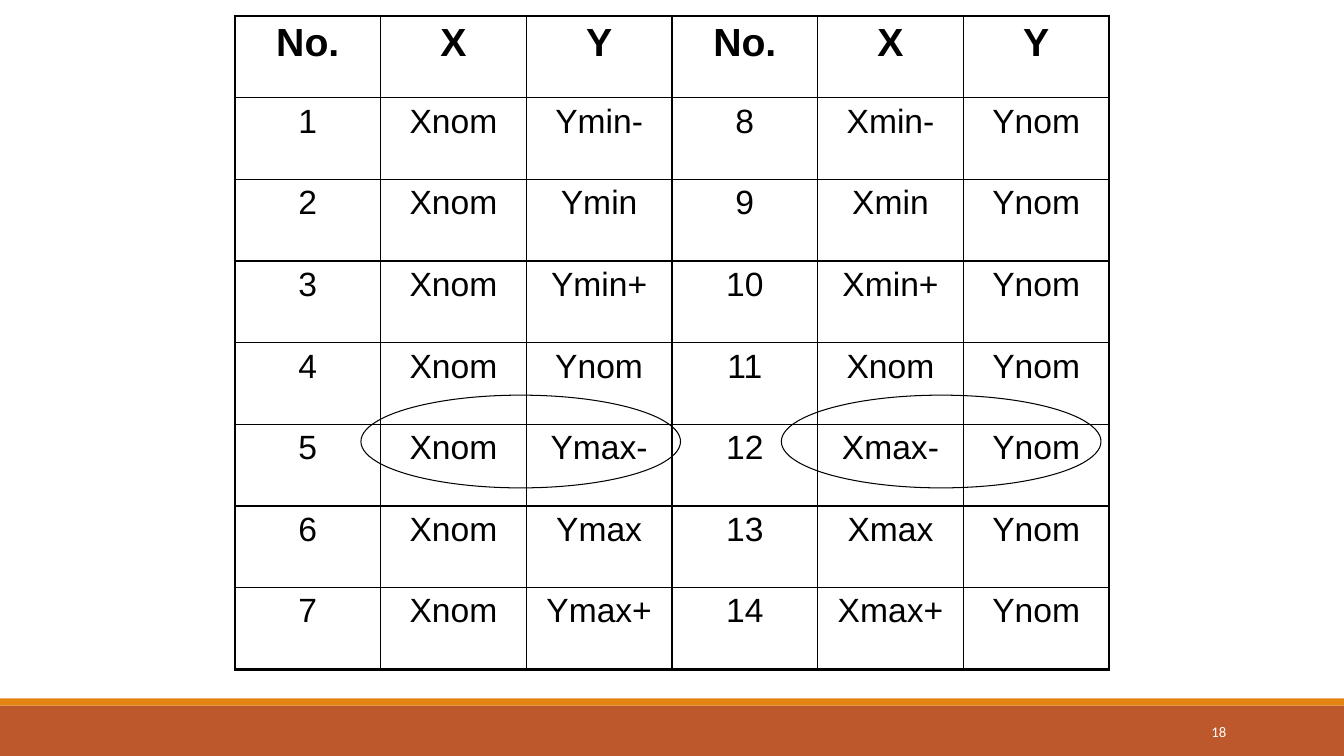
from lxml.etree import SubElement
from pptx import Presentation
from pptx.dml.color import RGBColor
from pptx.enum.shapes import MSO_SHAPE
from pptx.enum.text import MSO_ANCHOR, PP_ALIGN
from pptx.oxml.ns import qn
from pptx.util import Inches, Pt

HUES = {"ink": "000000", "rust": "BD582C", "amber": "E48312", "white": "FFFFFF"}
ROWS = [
    ("No.", "X", "Y", "No.", "X", "Y"),
    ("1", "Xnom", "Ymin-", "8", "Xmin-", "Ynom"),
    ("2", "Xnom", "Ymin", "9", "Xmin", "Ynom"),
    ("3", "Xnom", "Ymin+", "10", "Xmin+", "Ynom"),
    ("4", "Xnom", "Ynom", "11", "Xnom", "Ynom"),
    ("5", "Xnom", "Ymax-", "12", "Xmax-", "Ynom"),
    ("6", "Xnom", "Ymax", "13", "Xmax", "Ynom"),
    ("7", "Xnom", "Ymax+", "14", "Xmax+", "Ynom"),
]
BANDS = [(0, 7, 13.33, 0.5, "rust"), (0, 6.93, 13.33, 0.07, "amber")]
RINGS = [(3.58, 3.92, 3.17, 0.92), (7.75, 3.92, 3.17, 0.92)]
GRID = (2.33, 0.16, 8.67, 6.48)
PAGE = ("18", (10.83, 7.06, 1.43, 0.4))
HEAD = {"name": "Arial", "size": Pt(28), "bold": True}
BODY = {"name": "Arial", "size": Pt(24), "bold": False}
FOOT = {"name": "Calibri", "size": Pt(10.5)}
THICK, THIN = 2.25, 1


def color(name):
    return RGBColor.from_string(HUES[name])


def write(frame, text, form, hue, align):
    para = frame.paragraphs[0]
    para.alignment = align
    run = para.add_run()
    run.text = text
    for key, val in form.items():
        setattr(run.font, key, val)
    run.font.color.rgb = color(hue)


def draw(slide, kind, box, fill=None):
    shape = slide.shapes.add_shape(kind, *map(Inches, box))
    shape.shadow.inherit = False
    if fill:
        shape.fill.solid()
        shape.fill.fore_color.rgb = color(fill)
        shape.line.fill.background()
    else:
        shape.fill.background()
        shape.line.color.rgb = color("ink")
        shape.line.width = Pt(0.75)


def border(cell, edges):
    props = cell._tc.get_or_add_tcPr()
    for spot, (side, outer) in enumerate(edges.items()):
        width = Pt(THICK if outer else THIN)
        line = SubElement(props, qn("a:ln" + side), w=str(width))
        fill = SubElement(line, qn("a:solidFill"))
        SubElement(fill, qn("a:srgbClr"), val=HUES["ink"])
        props.insert(spot, line)


def grid(slide):
    tall, wide = len(ROWS), len(ROWS[0])
    table = slide.shapes.add_table(tall, wide, *map(Inches, GRID)).table
    table.first_row = table.horz_banding = False
    for col in table.columns:
        col.width = Inches(GRID[2] / wide)
    for r, row in enumerate(ROWS):
        table.rows[r].height = Inches(GRID[3] / tall)
        for c, text in enumerate(row):
            cell = table.cell(r, c)
            cell.fill.background()
            border(cell, {"L": c == 0, "R": c == wide - 1,
                          "T": r == 0, "B": r == tall - 1})
            write(cell.text_frame, text, BODY if r else HEAD, "ink", PP_ALIGN.CENTER)


def main():
    """Build the slide of test cases and save it."""
    deck = Presentation()
    deck.slide_width, deck.slide_height = Inches(13.33), Inches(7.5)
    slide = deck.slides.add_slide(deck.slide_layouts[6])
    for *box, fill in BANDS:
        draw(slide, MSO_SHAPE.RECTANGLE, box, fill)
    grid(slide)
    for box in RINGS:
        draw(slide, MSO_SHAPE.OVAL, box)
    text, box = PAGE
    frame = slide.shapes.add_textbox(*map(Inches, box)).text_frame
    frame.word_wrap = True
    frame.vertical_anchor = MSO_ANCHOR.MIDDLE
    write(frame, text, FOOT, "white", PP_ALIGN.RIGHT)
    deck.save("out.pptx")


if __name__ == "__main__":
    main()
